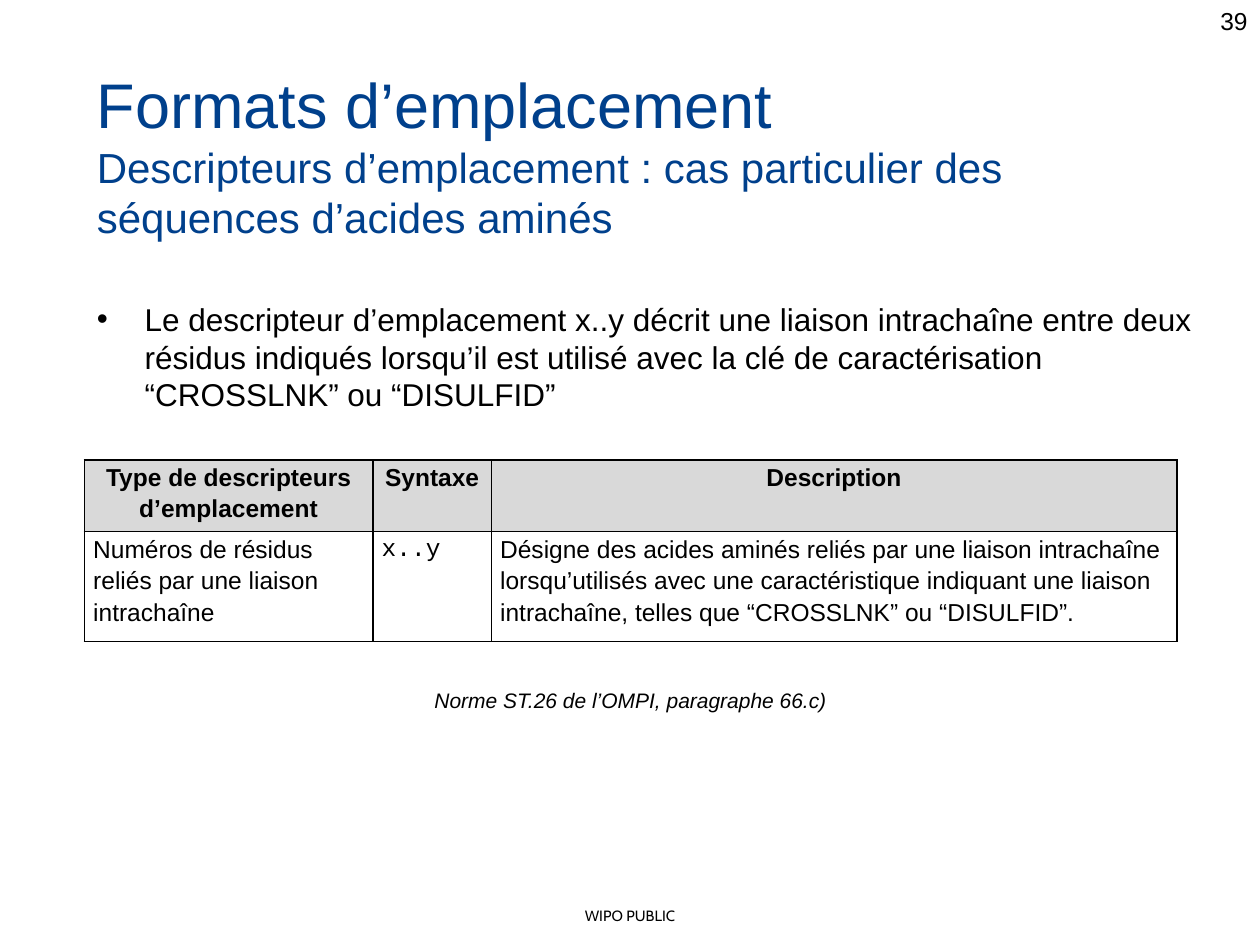
from lxml import etree
from pptx import Presentation
from pptx import util as u
from pptx.dml.color import RGBColor
from pptx.enum import text
from pptx.oxml.ns import qn

THEME = {
    "font": "Arial", "code": "Courier New", "footer_font": "Cabin",
    "ink": "000000", "title": "00408C", "header_fill": "D9D9D9", "paper": "FFFFFF",
    "title_pt": 36, "subtitle_pt": 24, "body_pt": 18,
    "table_pt": 14, "caption_pt": 12, "footer_pt": 8.5,
}
LEFT, CENTER, RIGHT = text.PP_ALIGN.LEFT, text.PP_ALIGN.CENTER, text.PP_ALIGN.RIGHT

PAGE = "39"
TITLE = "Formats d’emplacement"
SUBTITLE = "Descripteurs d’emplacement : cas particulier des séquences d’acides aminés"
BULLET = ("Le descripteur d’emplacement x..y décrit une liaison intrachaîne entre deux "
          "résidus indiqués lorsqu’il est utilisé avec la clé de caractérisation "
          "“CROSSLNK” ou “DISULFID”")
CAPTION = "Norme ST.26 de l’OMPI, paragraphe 66.c)"
FOOTER = "WIPO PUBLIC"
ROWS = [
    ("Type de descripteurs d’emplacement", "Syntaxe", "Description"),
    ("Numéros de résidus reliés par une liaison intrachaîne", "x..y",
     "Désigne des acides aminés reliés par une liaison intrachaîne lorsqu’utilisés avec "
     "une caractéristique indiquant une liaison intrachaîne, telles que “CROSSLNK” ou "
     "“DISULFID”."),
]

WIDTH, HEIGHT = 10, 7.5
MARGIN = 0.67
CONTENT = WIDTH - MARGIN - 0.33
COLUMNS = (2.29, 0.94, 5.44)
ROW_HEIGHTS = (0.57, 0.87)
INDENT = 0.38


def write(paragraph, words, size, font="font", color="ink", align=LEFT, **style):
    paragraph.alignment = align
    run = paragraph.add_run()
    run.text = words
    run.font.name = THEME[font]
    run.font.size = u.Pt(THEME[size])
    run.font.color.rgb = RGBColor.from_string(THEME[color])
    for key, value in style.items():
        setattr(run.font, key, value)


def add_frame(slide, left, top, width, height):
    frame = slide.shapes.add_textbox(*map(u.Inches, (left, top, width, height))).text_frame
    frame.word_wrap = True
    return frame


def set_bullet(paragraph):
    props = paragraph._p.get_or_add_pPr()
    props.set("marL", str(u.Inches(INDENT)))
    props.set("indent", str(-u.Inches(INDENT)))
    etree.SubElement(props, qn("a:buFont"), typeface=THEME["font"])
    etree.SubElement(props, qn("a:buChar"), char="•")


def set_borders(cell):
    props = cell._tc.get_or_add_tcPr()
    for position, side in enumerate(("a:lnL", "a:lnR", "a:lnT", "a:lnB")):
        line = etree.Element(qn(side), w=str(u.Pt(1)))
        fill = etree.SubElement(line, qn("a:solidFill"))
        etree.SubElement(fill, qn("a:srgbClr"), val=THEME["ink"])
        props.insert(position, line)


def add_descriptor_table(slide):
    table = slide.shapes.add_table(
        len(ROWS), len(COLUMNS), u.Inches(MARGIN), u.Inches(3.65),
        u.Inches(sum(COLUMNS)), u.Inches(sum(ROW_HEIGHTS))).table
    for column, width in zip(table.columns, COLUMNS):
        column.width = u.Inches(width)
    for r, (row, height) in enumerate(zip(ROWS, ROW_HEIGHTS)):
        table.rows[r].height = u.Inches(height)
        header = r == 0
        for c, words in enumerate(row):
            cell = table.cell(r, c)
            cell.margin_left = cell.margin_right = u.Inches(0.07)
            cell.margin_top = cell.margin_bottom = 0
            cell.fill.solid()
            cell.fill.fore_color.rgb = RGBColor.from_string(
                THEME["header_fill" if header else "paper"])
            set_borders(cell)
            paragraph = cell.text_frame.paragraphs[0]
            paragraph.line_spacing = 1.15
            write(paragraph, words, "table_pt",
                  font="code" if words == "x..y" else "font",
                  align=CENTER if header else LEFT, bold=header)


def main():
    deck = Presentation()
    deck.slide_width, deck.slide_height = u.Inches(WIDTH), u.Inches(HEIGHT)
    slide = deck.slides.add_slide(deck.slide_layouts[6])

    footer = add_frame(slide, 0, 7.15, WIDTH, 0.24)
    write(footer.paragraphs[0], FOOTER, "footer_pt", font="footer_font", align=CENTER)

    page = add_frame(slide, 7.67, 0, WIDTH - 7.67, 0.52)
    write(page.paragraphs[0], PAGE, "table_pt", align=RIGHT)

    heading = add_frame(slide, MARGIN, 0.47, CONTENT, 1.25)
    write(heading.paragraphs[0], TITLE, "title_pt", color="title")
    write(heading.add_paragraph(), SUBTITLE, "subtitle_pt", color="title")

    body = add_frame(slide, MARGIN, 2.33, CONTENT, 5.23)
    set_bullet(body.paragraphs[0])
    write(body.paragraphs[0], BULLET, "body_pt")

    caption = add_frame(slide, 3.35, 5.41, 5, 0.3)
    write(caption.paragraphs[0], CAPTION, "caption_pt", italic=True)

    add_descriptor_table(slide)
    deck.save("out.pptx")


if __name__ == "__main__":
    main()
